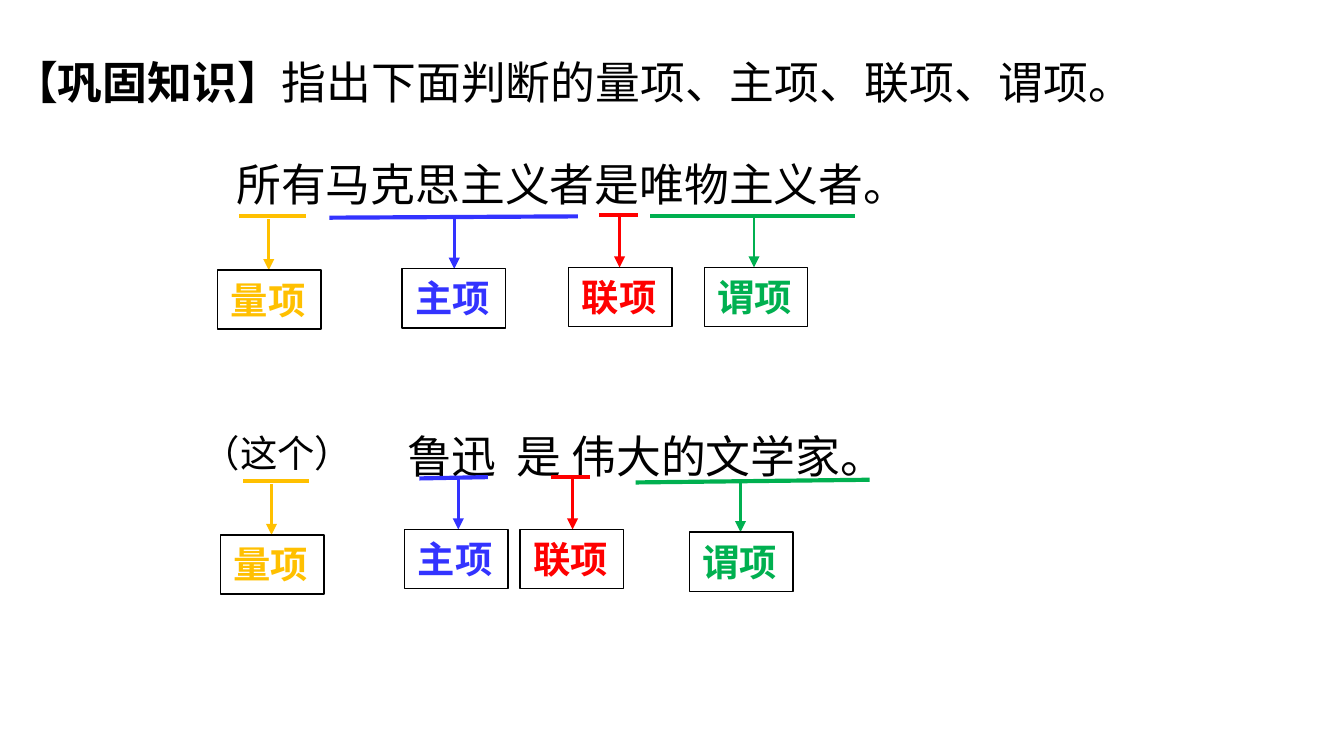
from dataclasses import dataclass

from lxml import etree
from pptx import Presentation
from pptx import util as u
from pptx.dml import color
from pptx.enum import shapes, text
from pptx.oxml import ns


@dataclass(frozen=True)
class Theme:
    ink: str = "000000"
    title_font: str = "Times New Roman"
    sentence_font: str = "Noto Sans CJK SC"
    label_font: str = "Arial"
    east_asian_font: str = "Noto Sans CJK SC"
    sentence_size: int = 24
    label_size: int = 20
    underline_width: float = 2.25
    arrow_width: float = 1.5
    border_width: float = 0.75


THEME = Theme()
TERM_COLORS = {"量项": "FFC000", "主项": "3333FF", "联项": "FF0000", "谓项": "00B050"}
SLIDE_WIDTH = 10
SLIDE_HEIGHT = SLIDE_WIDTH * 9 / 16
BOX_WIDTH, BOX_HEIGHT, ARROW_LENGTH = 0.77, 0.44, 0.38

# term, underline start, underline end, arrow x, box left and top
MARKS = [
    ("量项", (1.78, 1.61), (2.28, 1.61), 2.00, (1.62, 2.01)),
    ("主项", (2.45, 1.62), (4.30, 1.61), 3.38, (2.99, 2.00)),
    ("联项", (4.46, 1.60), (4.75, 1.60), 4.61, (4.23, 1.99)),
    ("谓项", (4.84, 1.61), (6.36, 1.61), 5.61, (5.24, 1.99)),
    ("量项", (1.81, 3.58), (2.30, 3.58), 2.02, (1.64, 3.98)),
    ("主项", (3.12, 3.56), (3.63, 3.55), 3.41, (3.01, 3.94)),
    ("联项", (4.10, 3.55), (4.39, 3.55), 4.26, (3.87, 3.94)),
    ("谓项", (4.73, 3.59), (6.47, 3.57), 5.51, (5.13, 3.96)),
]


def apply_format(target, values):
    for name, value in values.items():
        setattr(target, name, value)


def rgb(value):
    return color.RGBColor.from_string(value)


def write_runs(frame, runs, font, size, ink=THEME.ink, wrap=True,
               anchor=text.MSO_ANCHOR.TOP, line_spacing=None):
    apply_format(frame, {"word_wrap": wrap, "vertical_anchor": anchor})
    paragraph = frame.paragraphs[0]
    apply_format(paragraph, {"alignment": text.PP_ALIGN.LEFT,
                             "line_spacing": line_spacing})
    for words, bold in runs:
        run = paragraph.add_run()
        run.text = words
        apply_format(run.font, {"name": font, "size": u.Pt(size), "bold": bold})
        run.font.color.rgb = rgb(ink)
        east_asian = etree.SubElement(run.font._element, ns.qn("a:ea"))
        east_asian.set("typeface", THEME.east_asian_font)


def add_text(slide, bounds, runs, font, size, **options):
    shape = slide.shapes.add_textbox(*map(u.Inches, bounds))
    write_runs(shape.text_frame, runs, font, size, **options)


def add_line(slide, start, end, ink, width, arrow=False):
    line = slide.shapes.add_connector(
        shapes.MSO_CONNECTOR.STRAIGHT, *map(u.Inches, (*start, *end)))
    line.line.color.rgb = rgb(ink)
    line.line.width = u.Pt(width)
    if arrow:
        tail = etree.SubElement(line.line._get_or_add_ln(), ns.qn("a:tailEnd"))
        tail.set("type", "triangle")
    etree.SubElement(line._element.spPr, ns.qn("a:effectLst"))


def add_term_box(slide, position, term):
    shape = slide.shapes.add_shape(
        shapes.MSO_SHAPE.RECTANGLE,
        *map(u.Inches, (*position, BOX_WIDTH, BOX_HEIGHT)))
    shape.shadow.inherit = False
    shape.fill.background()
    shape.line.color.rgb = rgb(THEME.ink)
    shape.line.width = u.Pt(THEME.border_width)
    write_runs(shape.text_frame, [(term, True)], THEME.label_font,
               THEME.label_size, ink=TERM_COLORS[term], wrap=False)


def add_mark(slide, term, start, end, arrow_x, box):
    ink = TERM_COLORS[term]
    top = box[1]
    add_line(slide, start, end, ink, THEME.underline_width)
    add_line(slide, (arrow_x, top - ARROW_LENGTH), (arrow_x, top), ink,
             THEME.arrow_width, arrow=True)
    add_term_box(slide, box, term)


def main():
    presentation = Presentation()
    apply_format(presentation, {"slide_width": u.Inches(SLIDE_WIDTH),
                                "slide_height": u.Inches(SLIDE_HEIGHT)})
    slide = presentation.slides.add_slide(presentation.slide_layouts[6])

    add_text(slide, (0, 0.36, 10, 0.5),
             [("【巩固知识】", True), ("指出下面判断的量项、主项、联项、谓项。", False)],
             THEME.title_font, THEME.sentence_size, anchor=text.MSO_ANCHOR.MIDDLE)
    add_text(slide, (1.66, 1.11, 6.6, 0.51),
             [("所有马克思主义者是唯物主义者。", False)],
             THEME.sentence_font, THEME.sentence_size, anchor=text.MSO_ANCHOR.MIDDLE)
    add_text(slide, (2.93, 3, 6.91, 0.65), [("鲁迅  是 伟大的文学家。", False)],
             THEME.sentence_font, THEME.sentence_size, line_spacing=u.Pt(39))
    add_text(slide, (1.41, 3.15, 1.32, 0.44), [("（这个）", False)],
             THEME.label_font, THEME.label_size, wrap=False)

    for mark in MARKS:
        add_mark(slide, *mark)
    presentation.save("out.pptx")


if __name__ == "__main__":
    main()
